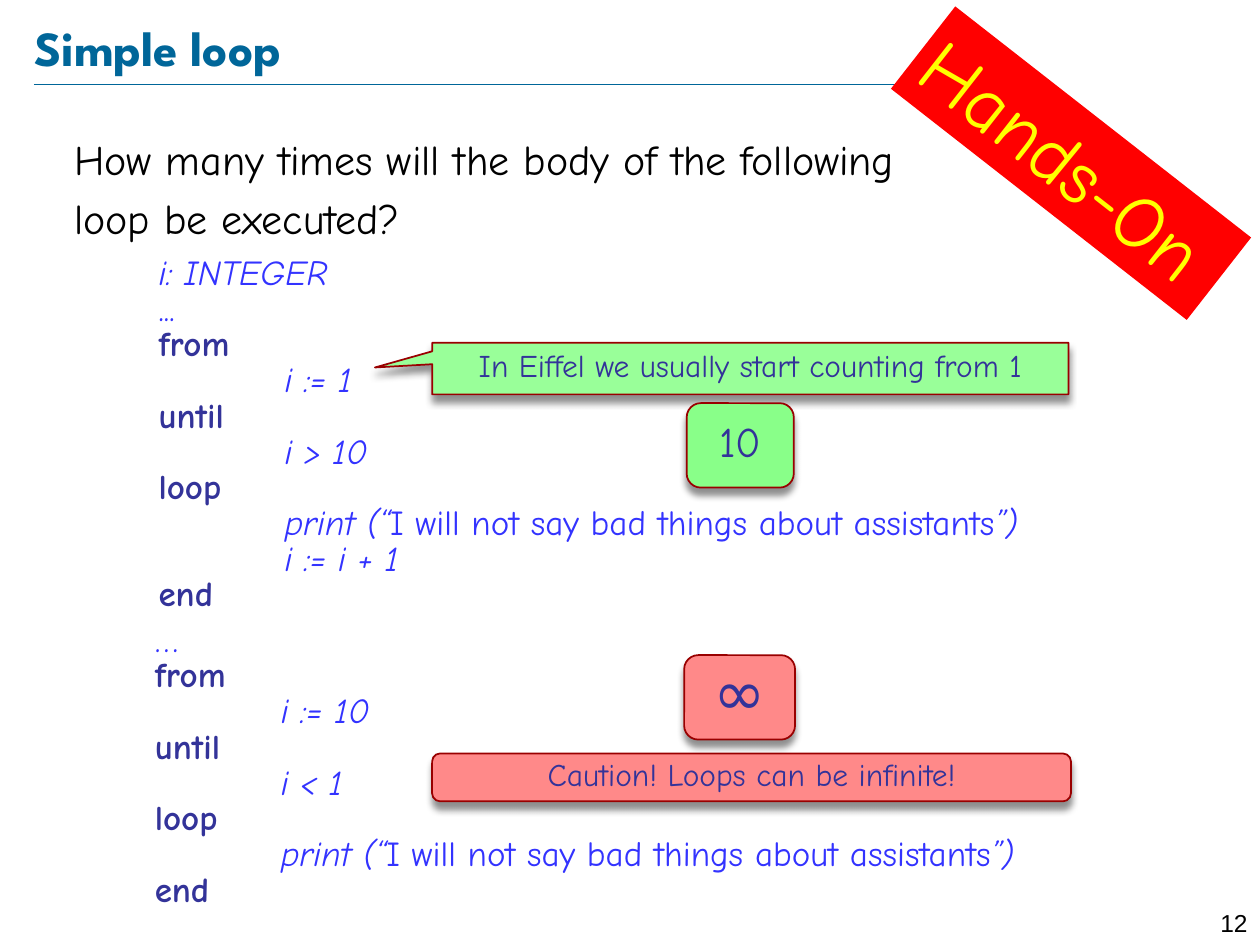
from dataclasses import dataclass

from lxml.etree import SubElement
from pptx import Presentation
from pptx.dml.color import RGBColor
from pptx.enum.shapes import MSO_CONNECTOR, MSO_SHAPE
from pptx.enum.text import MSO_ANCHOR, MSO_AUTO_SIZE, PP_ALIGN
from pptx.oxml.ns import qn
from pptx.util import Inches, Pt


@dataclass(frozen=True)
class Theme:
    heading_font: str = "League Spartan"
    body_font: str = "Comic Neue"
    number_font: str = "Arial"
    heading: str = "006699"
    black: str = "000000"
    keyword: str = "333399"
    code: str = "3333FF"
    border: str = "990000"
    mint: str = "99FF99"
    green: str = "89FF89"
    pink: str = "FF8989"
    red: str = "FF0000"
    yellow: str = "FFFF00"
    number_size: int = 14
    note_size: int = 18
    code_size: int = 20
    body_size: int = 24
    heading_size: int = 28
    infinity_size: int = 36
    banner_size: int = 44


THEME = Theme()


@dataclass(frozen=True)
class Area:
    left: float
    top: float
    width: float
    height: float

    def lengths(self):
        return [Inches(n) for n in (self.left, self.top, self.width, self.height)]


@dataclass(frozen=True)
class Span:
    text: str
    color: str = THEME.code
    italic: bool = False
    bold: bool = False
    size: int = THEME.code_size
    font: str = THEME.body_font


@dataclass(frozen=True)
class Note:
    area: Area
    shape: MSO_SHAPE
    fill: str
    text: str
    size: int = THEME.note_size
    tail: tuple = ()


def keyword(word: str) -> list[Span]:
    return [Span(word, THEME.keyword, bold=True)]


def statement(code: str) -> list[Span]:
    return [Span("\t" + code, italic=True)]


PRINT = [
    Span("\tprint (“", italic=True),
    Span("I will not say bad things about assistants"),
    Span("”)", italic=True),
]


def loop_lines(start: str, stop: str, body: list[list[Span]]) -> list[list[Span]]:
    return [keyword("from"), statement(start), keyword("until"), statement(stop),
            keyword("loop"), *body, keyword("end")]


FINITE_LOOP = [[Span("i: INTEGER", italic=True)], [Span("...")],
               *loop_lines("i := 1", "i > 10", [PRINT, statement("i := i + 1")])]
INFINITE_LOOP = [[Span("…")], *loop_lines("i := 10", "i < 1", [PRINT])]

NOTES = [
    Note(Area(3.43, 2.72, 5.05, 0.41), MSO_SHAPE.RECTANGULAR_CALLOUT, THEME.mint,
         "In Eiffel we usually start counting from 1", tail=(-0.59, -0.02)),
    Note(Area(5.45, 3.2, 0.85, 0.67), MSO_SHAPE.ROUNDED_RECTANGLE, THEME.green,
         "10", THEME.body_size),
    Note(Area(3.43, 5.98, 5.07, 0.38), MSO_SHAPE.ROUNDED_RECTANGLE, THEME.pink,
         "Caution! Loops can be infinite!"),
    Note(Area(5.43, 5.2, 0.88, 0.67), MSO_SHAPE.ROUNDED_RECTANGLE, THEME.pink,
         "∞", THEME.infinity_size),
]


def write(frame, lines: list[list[Span]], align=PP_ALIGN.LEFT,
          spacing: float = 1.0, gap: float = 0) -> None:
    for index, spans in enumerate(lines):
        para = frame.add_paragraph() if index else frame.paragraphs[0]
        para.alignment = align
        para.line_spacing = spacing
        para.space_before = Pt(gap if index else 0)
        for span in spans:
            run = para.add_run()
            run.text = span.text
            run.font.name = span.font
            run.font.size = Pt(span.size)
            run.font.bold = span.bold
            run.font.italic = span.italic
            run.font.color.rgb = RGBColor.from_string(span.color)


def add_text(page, area: Area, lines: list[list[Span]], **layout):
    box = page.shapes.add_textbox(*area.lengths())
    box.text_frame.word_wrap = True
    write(box.text_frame, lines, **layout)
    return box


def add_code(page, area: Area, lines: list[list[Span]]) -> None:
    """Write program lines with statements indented to a one-inch tab stop."""
    box = add_text(page, area, lines, spacing=0.85)
    for para in box.text_frame.paragraphs:
        stops = SubElement(para._p.get_or_add_pPr(), qn("a:tabLst"))
        SubElement(stops, qn("a:tab"), pos=str(int(Inches(1))), algn="l")


def add_filled(page, shape: MSO_SHAPE, area: Area, fill: str):
    box = page.shapes.add_shape(shape, *area.lengths())
    box.shadow.inherit = False
    box.fill.solid()
    box.fill.fore_color.rgb = RGBColor.from_string(fill)
    return box


def drop_shadow(box) -> None:
    """Cast a soft black shadow straight down."""
    effects = box.element.spPr.find(qn("a:effectLst"))
    distance = str(int(Pt(4)))
    shadow = SubElement(effects, qn("a:outerShdw"), blurRad=distance,
                        dist=distance, dir="5400000", rotWithShape="0")
    color = SubElement(shadow, qn("a:srgbClr"), val=THEME.black)
    SubElement(color, qn("a:alpha"), val="43000")


def add_note(page, note: Note) -> None:
    box = add_filled(page, note.shape, note.area, note.fill)
    for index, value in enumerate(note.tail):
        box.adjustments[index] = value
    box.line.color.rgb = RGBColor.from_string(THEME.border)
    box.line.width = Pt(1)
    drop_shadow(box)
    frame = box.text_frame
    frame.word_wrap = True
    frame.margin_left = frame.margin_right = 0
    frame.vertical_anchor = MSO_ANCHOR.MIDDLE
    write(frame, [[Span(note.text, THEME.keyword, size=note.size)]],
          align=PP_ALIGN.CENTER, spacing=0.8)


def add_heading(page) -> None:
    rule = page.shapes.add_connector(MSO_CONNECTOR.STRAIGHT, Inches(0.27), Inches(0.67),
                                     Inches(8.15), Inches(0.67))
    rule.line.color.rgb = RGBColor.from_string(THEME.heading)
    rule.line.width = Pt(0.25)
    SubElement(rule.element.spPr, qn("a:effectLst"))
    title = Span("Simple loop", THEME.heading, bold=True,
                 size=THEME.heading_size, font=THEME.heading_font)
    frame = add_text(page, Area(0.27, 0.13, 8.69, 0.48), [[title]]).text_frame
    frame.margin_left = frame.margin_right = frame.margin_top = frame.margin_bottom = 0
    frame.vertical_anchor = MSO_ANCHOR.MIDDLE


def add_banner(page) -> None:
    banner = add_filled(page, MSO_SHAPE.RECTANGLE, Area(7.01, 0.88, 2.98, 0.83), THEME.red)
    banner.rotation = 38
    banner.line.fill.background()
    frame = banner.text_frame
    frame.word_wrap = False
    frame.auto_size = MSO_AUTO_SIZE.SHAPE_TO_FIT_TEXT
    frame.vertical_anchor = MSO_ANCHOR.TOP
    write(frame, [[Span("Hands-On", THEME.yellow, size=THEME.banner_size)]])


def main() -> None:
    deck = Presentation()
    deck.slide_width, deck.slide_height = Inches(10), Inches(7.5)
    page = deck.slides.add_slide(deck.slide_layouts[6])
    add_heading(page)
    number = Span("12", THEME.black, size=THEME.number_size, font=THEME.number_font)
    add_text(page, Area(9.45, 7.16, 0.55, 0.24), [[number]], align=PP_ALIGN.RIGHT)
    question = ["How many times will the body of the following", "loop be executed?"]
    add_text(page, Area(0.49, 1.01, 9.21, 5.91),
             [[Span(line, THEME.black, size=THEME.body_size)] for line in question],
             gap=0.2 * THEME.body_size)
    add_banner(page)
    add_code(page, Area(1.16, 1.99, 7.92, 2.96), FINITE_LOOP)
    add_code(page, Area(1.13, 4.9, 7.92, 2.39), INFINITE_LOOP)
    for note in NOTES:
        add_note(page, note)
    deck.save("out.pptx")


if __name__ == "__main__":
    main()
